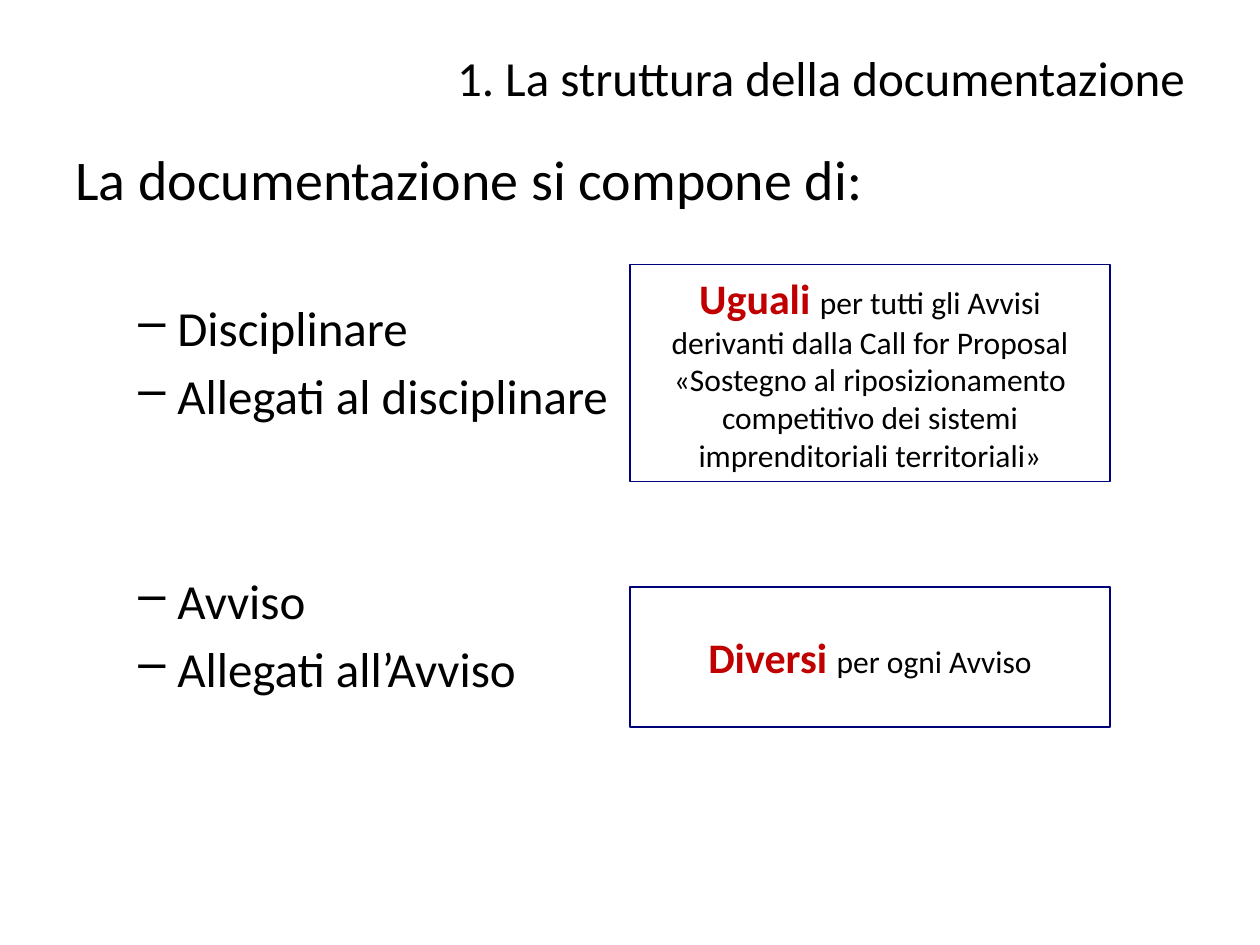
import pptx
import pptx.util
import pptx.dml.color
import pptx.enum.shapes
import pptx.enum.text
import pptx.oxml
import pptx.oxml.ns

Inches = pptx.util.Inches
Pt = pptx.util.Pt
ALIGN = pptx.enum.text.PP_ALIGN
MIDDLE = pptx.enum.text.MSO_ANCHOR.MIDDLE

BLACK = pptx.dml.color.RGBColor(0, 0, 0)
RED = pptx.dml.color.RGBColor(0xC0, 0, 0)
NAVY = pptx.dml.color.RGBColor(0, 0, 0x78)
FACE = "Calibri"
GAP = 5.1

# Text and space before, in points
ITEMS = [
    ("Disciplinare", 49),
    ("Allegati al disciplinare", GAP),
    ("Avviso", 83.5),
    ("Allegati all’Avviso", GAP),
]
# Top, height, red word, rest of the text
NOTES = [
    (2.1, 1.72, "Uguali ",
     "per tutti gli Avvisi derivanti dalla Call for Proposal "
     "«Sostegno al riposizionamento competitivo dei sistemi "
     "imprenditoriali territoriali»"),
    (4.66, 1.11, "Diversi ", "per ogni Avviso"),
]


def style(font, size, color=BLACK, bold=False):
    font.name = FACE
    font.size = Pt(size)
    font.color.rgb = color
    font.bold = bold


def add_text(slide, top, height):
    box = slide.shapes.add_textbox(
        Inches(0.5), Inches(top), Inches(9), Inches(height))
    box.text_frame.word_wrap = True
    return box.text_frame


def add_title(slide):
    frame = add_text(slide, 0.3, 0.62)
    frame.vertical_anchor = MIDDLE
    para = frame.paragraphs[0]
    para.text = "1. La struttura della documentazione"
    para.alignment = ALIGN.RIGHT
    style(para.font, 28)


def add_dash(para):
    """Give the paragraph a hanging dash bullet."""
    props = para._p.get_or_add_pPr()
    props.set("marL", str(Inches(0.81)))
    props.set("indent", str(Inches(-0.31)))
    mark = pptx.oxml.parse_xml(
        '<a:buChar %s char="–"/>' % pptx.oxml.ns.nsdecls("a"))
    props.append(mark)


def add_list(slide):
    frame = add_text(slide, 1.07, 5.63)
    frame.margin_top = Inches(0.08)
    head = frame.paragraphs[0]
    head.text = "La documentazione si compone di:"
    style(head.font, 32)
    for text, gap in ITEMS:
        para = frame.add_paragraph()
        para.text = text
        para.level = 1
        add_dash(para)
        para.space_before = Pt(gap)
        style(para.font, 28)


def add_note(slide, top, height, word, rest):
    box = slide.shapes.add_shape(
        pptx.enum.shapes.MSO_SHAPE.RECTANGLE,
        Inches(5), Inches(top), Inches(3.81), Inches(height))
    box.shadow.inherit = False
    box.fill.background()
    box.line.color.rgb = NAVY
    box.line.width = Pt(0.75)
    frame = box.text_frame
    frame.word_wrap = True
    frame.vertical_anchor = MIDDLE
    para = frame.paragraphs[0]
    para.alignment = ALIGN.CENTER
    for text, size, color, bold in (
            (word, 24, RED, True), (rest, 18, BLACK, False)):
        run = para.add_run()
        run.text = text
        style(run.font, size, color, bold)


def main():
    deck = pptx.Presentation()
    deck.slide_width = Inches(10)
    deck.slide_height = Inches(7.5)
    slide = deck.slides.add_slide(deck.slide_layouts[6])
    add_title(slide)
    add_list(slide)
    for note in NOTES:
        add_note(slide, *note)
    deck.save("out.pptx")


if __name__ == "__main__":
    main()
